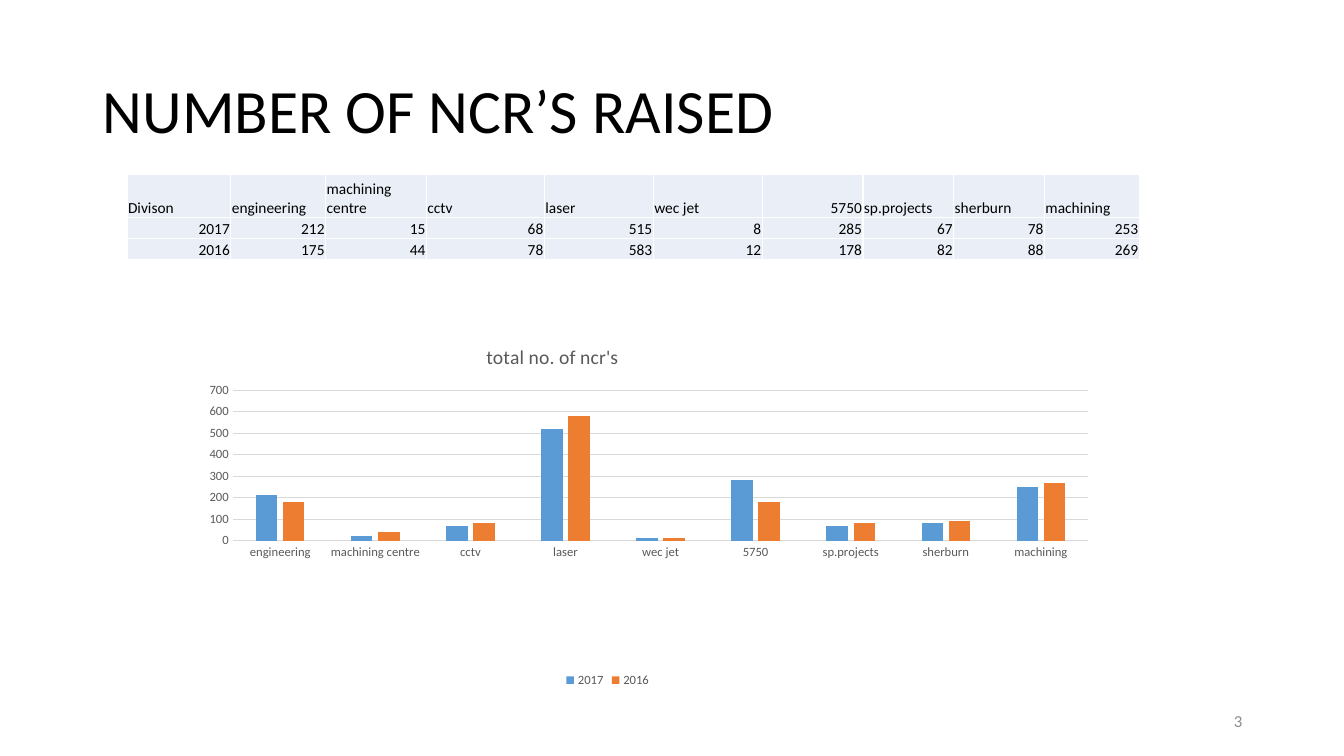
"""Build a slide that compares the NCRs raised per division in 2017 and 2016."""
from lxml import etree
from pptx import Presentation
from pptx import util as u
from pptx.chart import data as cd
from pptx.dml.color import RGBColor
from pptx.enum import chart as ch, text
from pptx.oxml import ns

BLACK = RGBColor(0x00, 0x00, 0x00)
WHITE = RGBColor(0xFF, 0xFF, 0xFF)
GREY = RGBColor(0x59, 0x59, 0x59)
NUMBER_GREY = RGBColor(0x8C, 0x8C, 0x8C)
GRID = RGBColor(0xD9, 0xD9, 0xD9)
CELL = RGBColor(0xEA, 0xEF, 0xF7)
BLUE = RGBColor(0x5B, 0x9B, 0xD5)
ORANGE = RGBColor(0xED, 0x7D, 0x31)

FONT = "Calibri"
LEFT, RIGHT = text.PP_ALIGN.LEFT, text.PP_ALIGN.RIGHT
MIDDLE, BOTTOM = text.MSO_ANCHOR.MIDDLE, text.MSO_ANCHOR.BOTTOM

DIVISIONS = ["engineering", "machining centre", "cctv", "laser", "wec jet",
             "5750", "sp.projects", "sherburn", "machining"]
RAISED = {
    "2017": [212, 15, 68, 515, 8, 285, 67, 78, 253],
    "2016": [175, 44, 78, 583, 12, 178, 82, 88, 269],
}
COLUMN_WIDTHS = [1.03, 0.94, 1, 1.17, 1.08, 1.08, 1, 0.9, 0.9, 0.94]
ROW_HEIGHTS = [0.43, 0.21, 0.21]


def set_font(font, size, color):
    font.name, font.size, font.bold = FONT, u.Pt(size), False
    font.color.rgb = color


def write(tf, content, size=11, color=BLACK, align=LEFT, spacing=None):
    p = tf.paragraphs[0]
    p.alignment = align
    p.line_spacing = spacing
    r = p.add_run()
    r.text = content
    set_font(r.font, size, color)


def place(parent, index, **layout):
    for old in parent.findall(ns.qn("c:layout")):
        parent.remove(old)
    node = etree.Element(ns.qn("c:layout"))
    manual = etree.SubElement(node, ns.qn("c:manualLayout"))
    for name, value in layout.items():
        etree.SubElement(manual, ns.qn(f"c:{name}"), val=str(value))
    parent.insert(index, node)


class SlideBuilder:
    def __init__(self, prs):
        self.s = prs.slides.add_slide(prs.slide_layouts[5])

    def box(self, left, top, width, height):
        return [u.Inches(v) for v in (left, top, width, height)]

    def title(self, content, *at):
        sp = self.s.shapes.title
        sp.left, sp.top, sp.width, sp.height = self.box(*at)
        tf = sp.text_frame
        tf.auto_size = text.MSO_AUTO_SIZE.NONE
        tf.vertical_anchor = MIDDLE
        write(tf, content, size=44, spacing=0.9)

    def slide_number(self, content, *at):
        tf = self.s.shapes.add_textbox(*self.box(*at)).text_frame
        tf.word_wrap = True
        tf.vertical_anchor = MIDDLE
        write(tf, content, size=12, color=NUMBER_GREY, align=RIGHT)

    def cell(self, cell, content):
        cell.margin_left = cell.margin_right = cell.margin_top = u.Inches(0.01)
        cell.margin_bottom = 0
        cell.vertical_anchor = BOTTOM
        tc_pr = cell._tc.get_or_add_tcPr()
        for side in ("lnL", "lnR", "lnT", "lnB"):
            ln = etree.SubElement(tc_pr, ns.qn(f"a:{side}"), w=str(u.Pt(1)))
            fill = etree.SubElement(ln, ns.qn("a:solidFill"))
            etree.SubElement(fill, ns.qn("a:srgbClr"), val=str(WHITE))
        cell.fill.solid()
        cell.fill.fore_color.rgb = CELL
        write(cell.text_frame, content,
              align=RIGHT if content.isdigit() else LEFT)

    def table(self, rows, left, top):
        at = self.box(left, top, sum(COLUMN_WIDTHS), sum(ROW_HEIGHTS))
        table = self.s.shapes.add_table(len(rows), len(rows[0]), *at).table
        table.first_row = table.horz_banding = False
        for column, width in zip(table.columns, COLUMN_WIDTHS):
            column.width = u.Inches(width)
        for row, height, contents in zip(table.rows, ROW_HEIGHTS, rows):
            row.height = u.Inches(height)
            for cell, content in zip(row.cells, contents):
                self.cell(cell, content)

    def axis(self, axis):
        axis.major_tick_mark = axis.minor_tick_mark = ch.XL_TICK_MARK.NONE
        set_font(axis.tick_labels.font, 9, GREY)

    def grey_line(self, line):
        line.color.rgb = GRID
        line.width = u.Pt(0.75)

    def chart(self, heading, *at):
        data = cd.CategoryChartData()
        data.categories = DIVISIONS
        for year, values in RAISED.items():
            data.add_series(year, [round(value, -1) for value in values])
        chart = self.s.shapes.add_chart(
            ch.XL_CHART_TYPE.COLUMN_CLUSTERED, *self.box(*at), data).chart
        set_font(chart.font, 10, BLACK)

        chart.has_title = True
        write(chart.chart_title.text_frame, heading, size=14, color=GREY,
              align=None)
        place(chart.chart_title._element, 1,
              xMode="edge", yMode="edge", x=0.37, y=0.02)

        chart.has_legend = True
        chart.legend.position = ch.XL_LEGEND_POSITION.BOTTOM
        chart.legend.include_in_layout = False
        set_font(chart.legend.font, 9, GREY)

        self.axis(chart.category_axis)
        self.grey_line(chart.category_axis.format.line)
        values = chart.value_axis
        self.axis(values)
        values.format.line.fill.background()
        values.minimum_scale, values.maximum_scale = 0, 700
        values.major_unit = 100
        self.grey_line(values.major_gridlines.format.line)

        plot = chart.plots[0]
        plot.gap_width, plot.overlap = 219, -27
        plot.vary_by_categories = False
        for series, color in zip(plot.series, (BLUE, ORANGE)):
            series.format.fill.solid()
            series.format.fill.fore_color.rgb = color
        place(plot._element.getparent(), 0, layoutTarget="inner",
              xMode="edge", yMode="edge", x=0.11, y=0.16, w=0.89, h=0.42)


def main():
    prs = Presentation()
    prs.slide_width, prs.slide_height = u.Inches(13.33), u.Inches(7.5)
    slide = SlideBuilder(prs)
    slide.title("NUMBER OF NCR’S RAISED", 0.92, 0.4, 11.5, 1.45)
    slide.slide_number("3", 9.42, 6.95, 3, 0.4)
    rows = [["Divison", *DIVISIONS]]
    rows += [[year, *map(str, values)] for year, values in RAISED.items()]
    slide.table(rows, 1.26, 1.73)
    slide.chart("total no. of ncr's", 1.26, 3.3, 9.54, 3.56)
    prs.save("out.pptx")


if __name__ == "__main__":
    main()
